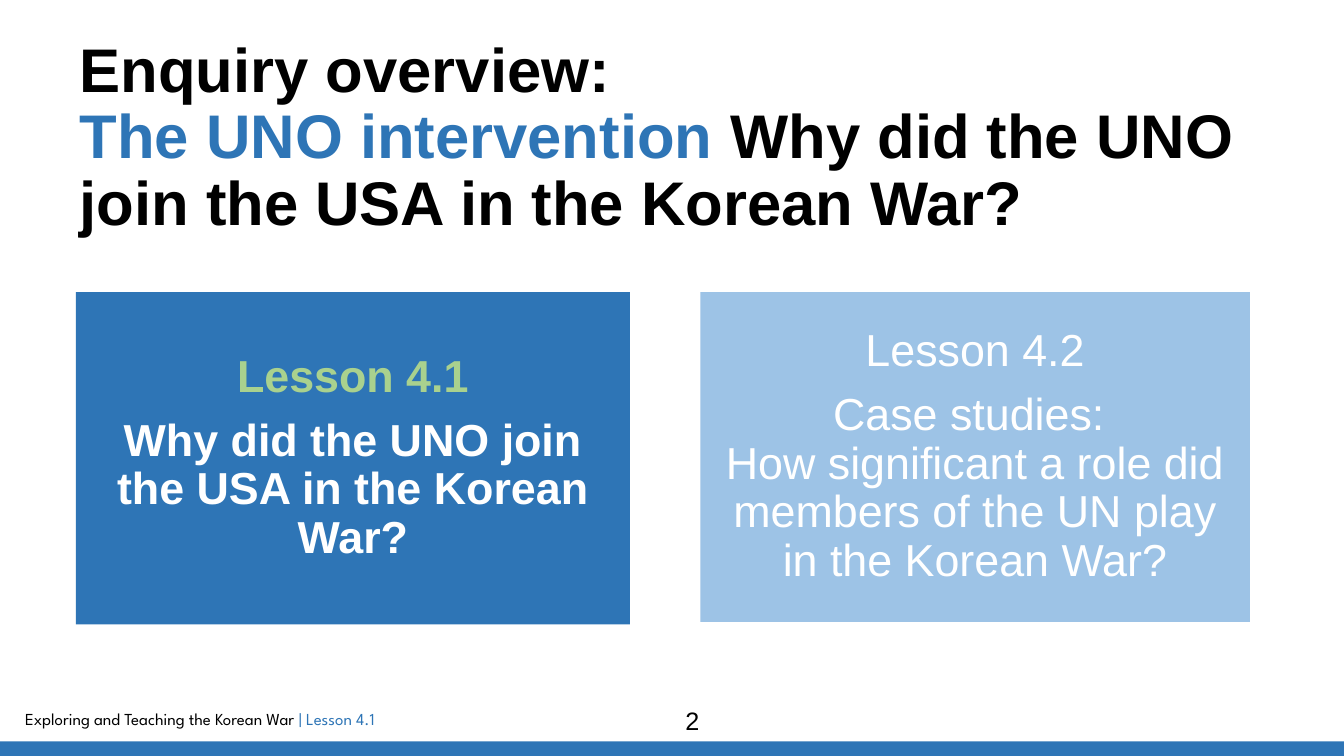
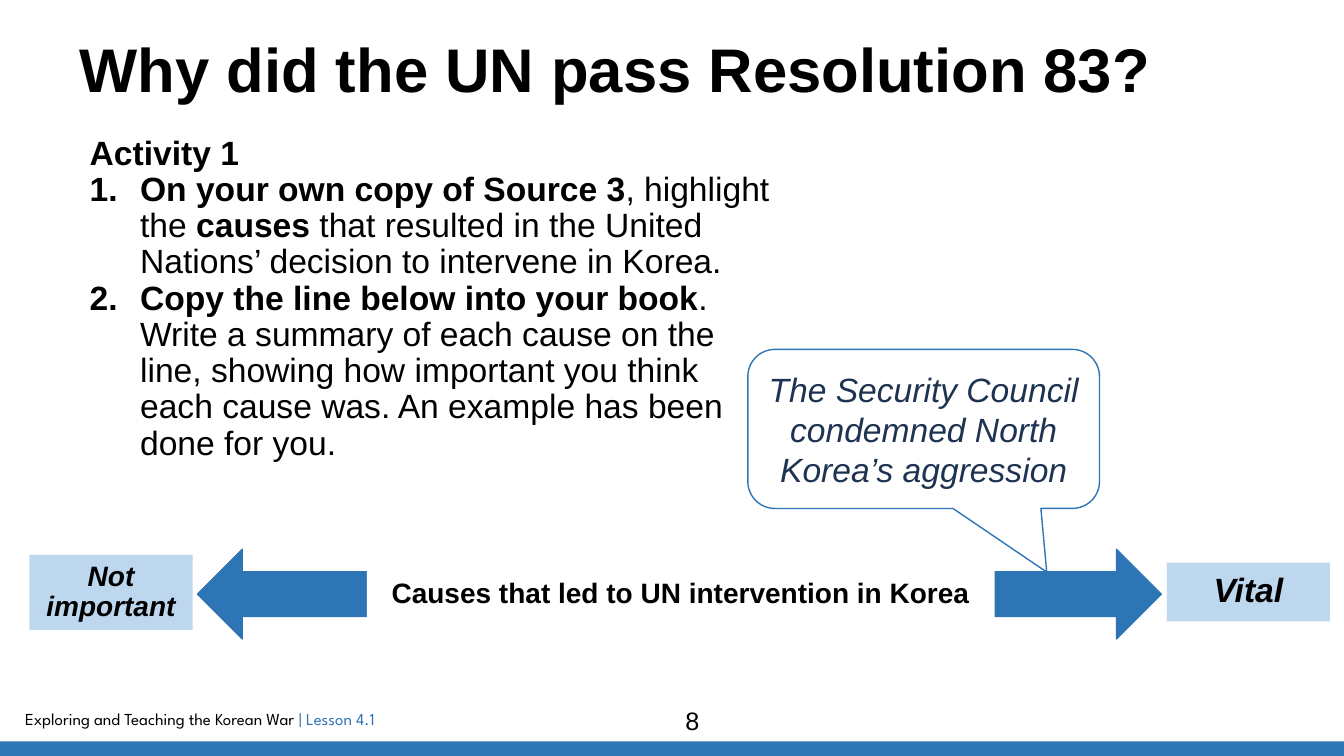
from dataclasses import dataclass

from lxml.etree import SubElement
from pptx import Presentation
from pptx.dml.color import RGBColor
from pptx.enum.shapes import MSO_SHAPE as Shape
from pptx.enum.text import MSO_ANCHOR as Anchor, PP_ALIGN as Align
from pptx.oxml.ns import qn
from pptx.util import Pt


@dataclass(frozen=True)
class Theme:
    # Colours
    ink: str = "000000"
    paper: str = "FFFFFF"
    accent: str = "2E75B6"
    soft: str = "9DC3E6"
    pale: str = "BDD7EE"
    green: str = "A9D18E"
    navy: str = "1E3351"
    # Fonts and type sizes
    body_font: str = "Arial"
    footer_font: str = "League Spartan"
    title: int = 44
    card: int = 32
    body: int = 24
    label: int = 20
    number: int = 18
    footer: int = 12
    tight: float = 0.9


@dataclass(frozen=True)
class Box:
    left: float
    top: float
    width: float
    height: float

    def inner(self, left, top, width, height):
        """A box placed relative to this one."""
        return Box(self.left + left, self.top + top, width, height)

    def lengths(self):
        return [Pt(v) for v in (self.left, self.top, self.width, self.height)]


@dataclass(frozen=True)
class Span:
    text: str
    color: str = Theme.ink
    bold: bool = False
    italic: bool = False


THEME = Theme()
PAGE = Box(0, 0, 960, 540)


# Building blocks
def add_panel(page, box, fill, kind=Shape.RECTANGLE, line=None):
    panel = page.shapes.add_shape(kind, *box.lengths())
    panel.shadow.inherit = False
    panel.fill.solid()
    panel.fill.fore_color.rgb = RGBColor.from_string(fill)
    if line:
        panel.line.color.rgb = RGBColor.from_string(line)
        panel.line.width = Pt(1)
    else:
        panel.line.fill.background()
    return panel


def set_frame(shape, anchor=Anchor.TOP, inset=(7.2, 3.6)):
    frame = shape.text_frame
    frame.word_wrap = True
    frame.vertical_anchor = anchor
    frame.margin_left = frame.margin_right = Pt(inset[0])
    frame.margin_top = frame.margin_bottom = Pt(inset[1])
    return frame


def number_para(para, indent=36):
    props = para._p.get_or_add_pPr()
    props.set("marL", str(Pt(indent)))
    props.set("indent", str(-Pt(indent)))
    SubElement(props, qn("a:buFont"), typeface="+mj-lt")
    SubElement(props, qn("a:buAutoNum"), type="arabicPeriod")


def write(frame, paras, size, align=Align.LEFT, font=THEME.body_font,
          spacing=THEME.tight, after=0, numbered_from=None):
    for index, spans in enumerate(paras):
        para = frame.add_paragraph() if index else frame.paragraphs[0]
        if numbered_from is not None and index >= numbered_from:
            number_para(para)
        para.alignment = align
        para.line_spacing = spacing
        para.space_after = Pt(after)
        for span in spans:
            for row, text in enumerate(span.text.split("\n")):
                if row:
                    para.add_line_break()
                if text:
                    run = para.add_run()
                    run.text = text
                    run.font.name = font
                    run.font.size = Pt(size)
                    run.font.bold = span.bold
                    run.font.italic = span.italic
                    run.font.color.rgb = RGBColor.from_string(span.color)


def add_text(page, box, spans, size, inset=(7.2, 3.6), **style):
    frame = set_frame(page.shapes.add_textbox(*box.lengths()), inset=inset)
    write(frame, [spans], size, **style)


# Shared parts of every slide
def add_footer(page, box, number):
    add_text(page, box.inner(10.8, 3, 563, 21.6),
             [Span("Exploring and Teaching the Korean War "),
              Span("| Lesson 4.1", THEME.accent)],
             THEME.footer, font=THEME.footer_font, spacing=1)
    add_panel(page, box.inner(0, 29.6, box.width, 10.8), THEME.accent)
    add_text(page, box.inner(312, 0.4, 365, 28.8), [Span(str(number))],
             THEME.number, align=Align.CENTER, spacing=1)


def start_page(deck, title, title_height, number):
    page = deck.slides.add_slide(deck.slide_layouts[6])
    add_footer(page, PAGE.inner(0, 500, PAGE.width, 40), number)
    add_text(page, PAGE.inner(57, 28, 828, title_height), title, THEME.title,
             inset=(0, 0))
    return page


# Regions
def add_lesson_card(page, box, fill, lesson, question):
    frame = set_frame(add_panel(page, box, fill), Anchor.MIDDLE, (10, 10))
    write(frame, [[lesson], [question]], THEME.card, Align.CENTER, after=11.2)


def add_activity(page, box):
    frame = set_frame(add_panel(page, box, THEME.paper))
    write(frame, [
        [Span("Activity 1", bold=True)],
        [Span("On your own copy of Source 3", bold=True),
         Span(", highlight the "),
         Span("causes", bold=True),
         Span(" that resulted in the United Nations’ decision to intervene "
              "in Korea.")],
        [Span("Copy the line below into your book", bold=True),
         Span(". Write a summary of each cause on the line, showing how "
              "important you think each cause was. An example has been done "
              "for you.")],
    ], THEME.body, numbered_from=1)


def add_scale(page, box):
    add_panel(page, box.inner(120, 0, 688.5, 64), THEME.accent,
              Shape.LEFT_RIGHT_ARROW, THEME.accent)
    labels = [
        (box.inner(241, 12, 448.5, 40), THEME.paper, THEME.label, False,
         "Causes that led to UN intervention in Korea"),
        (box.inner(0, 4, 116.6, 53.5), THEME.pale, THEME.label, True,
         "Not important"),
        (box.inner(box.width - 116.6, 9.5, 116.6, 42), THEME.pale, THEME.body,
         True, "Vital"),
    ]
    for place, fill, size, italic, text in labels:
        frame = set_frame(add_panel(page, place, fill), Anchor.MIDDLE)
        write(frame, [[Span(text, bold=True, italic=italic)]], size,
              Align.CENTER)


def add_example(page, box):
    bubble = add_panel(page, box, THEME.paper,
                       Shape.ROUNDED_RECTANGULAR_CALLOUT, THEME.accent)
    for index, value in enumerate((0.35, 0.9, 0.17)):
        bubble.adjustments[index] = value
    write(set_frame(bubble, Anchor.MIDDLE),
          [[Span("The Security Council condemned North Korea’s aggression",
                 THEME.navy, italic=True)]],
          THEME.body, Align.CENTER, spacing=1)


# Slides
def build_overview(deck):
    question = "Why did the UNO join the USA in the Korean War?"
    title = [Span("Enquiry overview:\n", bold=True),
             Span("The UNO intervention ", THEME.accent, bold=True),
             Span(question, bold=True)]
    page = start_page(deck, title, 135, 2)
    add_lesson_card(page, PAGE.inner(500.3, 208.6, 392.5, 235.7), THEME.soft,
                    Span("Lesson 4.2", THEME.paper),
                    Span("Case studies: \nHow significant a role did members "
                         "of the UN play in the Korean War?", THEME.paper))
    add_lesson_card(page, PAGE.inner(54.2, 208.6, 395.8, 237.4), THEME.accent,
                    Span("Lesson 4.1", THEME.green, bold=True),
                    Span(question, THEME.paper, bold=True))


def build_activity(deck):
    title = [Span("Why did the UN pass Resolution 83?", bold=True)]
    page = start_page(deck, title, 104, 8)
    add_activity(page, PAGE.inner(57, 93.6, 505.5, 255))
    add_scale(page, PAGE.inner(21, 392.4, 929, 64))
    add_example(page, PAGE.inner(534.2, 249.6, 251.2, 113.6))


def main():
    deck = Presentation()
    deck.slide_width, deck.slide_height = Pt(PAGE.width), Pt(PAGE.height)
    build_overview(deck)
    build_activity(deck)
    deck.save("out.pptx")


if __name__ == "__main__":
    main()
